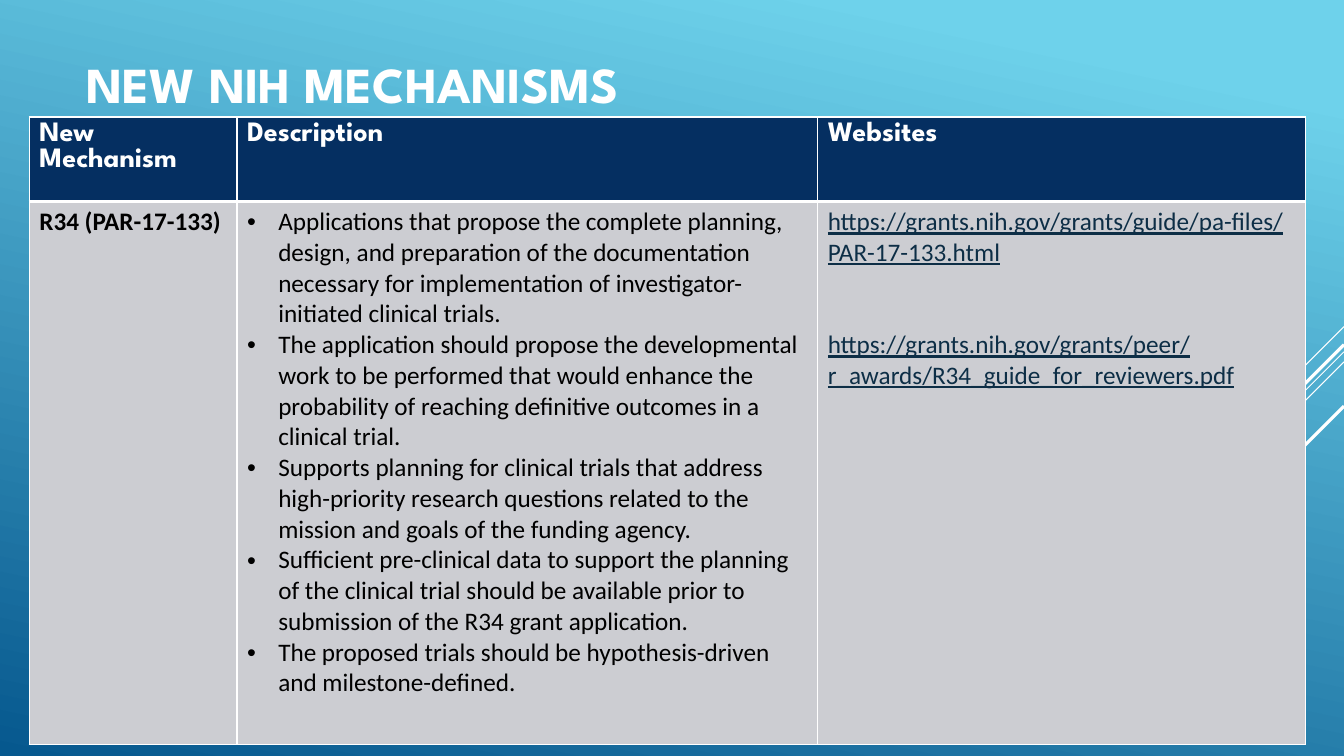
from lxml.etree import SubElement
from pptx import Presentation
from pptx.dml.color import RGBColor
from pptx.enum.shapes import MSO_CONNECTOR
from pptx.enum.text import MSO_ANCHOR
from pptx.oxml import parse_xml
from pptx.oxml.ns import nsdecls, qn
from pptx.util import Inches, Pt

WHITE, NAVY, GREY, BLACK, LINK = "FFFFFF", "052F61", "CCCDD2", "000000", "0D2E46"
SLIDE_WIDTH, SLIDE_HEIGHT = 13.33, 7.5
HEADING = {"name": "League Spartan", "bold": True}
BODY = {"name": "Calibri", "size": Pt(18), "bold": False}


def color(value):
    return RGBColor.from_string(value)


class SlideBuilder:
    def __init__(self, slide):
        self.slide = slide

    def background(self, stops, angle):
        fill = self.slide.background.fill
        fill.gradient()
        fill.gradient_angle = angle
        for stop, (position, value) in zip(fill.gradient_stops, stops):
            stop.position = position
            stop.color.rgb = color(value)

    def line(self, start, end, width):
        points = [Inches(n) for n in (*start, *end)]
        streak = self.slide.shapes.add_connector(MSO_CONNECTOR.STRAIGHT, *points)
        streak.line.color.rgb = color(WHITE)
        streak.line.width = Pt(width)
        SubElement(streak._element.spPr, qn("a:effectLst"))

    def paragraphs(self, frame, texts, style, ink, gap=0, bullets=False):
        for index, text in enumerate(texts):
            paragraph = frame.add_paragraph() if index else frame.paragraphs[0]
            if index and gap:
                paragraph.space_before = Pt(gap)
            run = paragraph.add_run()
            run.text = text
            for key, value in style.items():
                setattr(run.font, key, value)
            run.font.color.rgb = color(ink)
            if bullets:
                props = paragraph._p.get_or_add_pPr()
                props.set("marL", str(Inches(0.31)))
                props.set("indent", str(-Inches(0.31)))
                SubElement(props, qn("a:buFont"), typeface="Arial")
                SubElement(props, qn("a:buChar"), char="•")

    def text(self, box, texts, style, ink):
        frame = self.slide.shapes.add_textbox(*map(Inches, box)).text_frame
        frame.word_wrap = True
        frame.vertical_anchor = MSO_ANCHOR.MIDDLE
        self.paragraphs(frame, texts, style, ink)

    def table(self, box, widths, heights):
        table = self.slide.shapes.add_table(
            len(heights), len(widths), *map(Inches, box)).table
        for column, width in zip(table.columns, widths):
            column.width = Inches(width)
        for row, height in zip(table.rows, heights):
            row.height = Inches(height)
        return table

    def cell(self, cell, fill, borders, texts, style, ink, **layout):
        cell.fill.solid()
        cell.fill.fore_color.rgb = color(fill)
        props = cell._tc.get_or_add_tcPr()
        for index, (side, width) in enumerate(borders.items()):
            props.insert(index, parse_xml(
                f'<a:ln{side} {nsdecls("a")} w="{Pt(width)}"><a:solidFill>'
                f'<a:srgbClr val="{WHITE}"/></a:solidFill></a:ln{side}>'))
        self.paragraphs(cell.text_frame, texts, style, ink, **layout)


def main():
    prs = Presentation()
    prs.slide_width, prs.slide_height = Inches(SLIDE_WIDTH), Inches(SLIDE_HEIGHT)
    builder = SlideBuilder(prs.slides.add_slide(prs.slide_layouts[6]))

    # Background and diagonal streaks from the right edge
    builder.background([(0.1, "6ED2EB"), (1, "06588E")], 258)
    for top, run, width in [(3.24, 1, 0.75), (3.49, 3.26, 0.75), (3.59, 2.07, 0.75),
                            (3.42, 1.91, 2.25), (4.03, 1.39, 2.25)]:
        builder.line((SLIDE_WIDTH, top), (SLIDE_WIDTH - run, top + run), width)

    # Title
    builder.text((0.76, 0, 9.33, 1.65), ["NEW NIH MECHANISMS"],
                 {**HEADING, "size": Pt(36)}, WHITE)

    # Table header
    mechanisms = builder.table((0.29, 1.16, 12.66, 6.23), (2.06, 5.76, 4.84), (0.84, 5.39))
    header_borders = {"L": 1, "R": 1, "T": 1, "B": 3}
    for column, heading in enumerate(["New Mechanism", "Description", "Websites"]):
        builder.cell(mechanisms.cell(0, column), NAVY, header_borders, [heading],
                     {**HEADING, "size": Pt(20)}, WHITE)

    # Table body
    description = [
        "Applications that propose the complete planning, design, and preparation of the "
        "documentation necessary for implementation of investigator-initiated clinical trials.",
        "The application should propose the developmental work to be performed that would "
        "enhance the probability of reaching definitive outcomes in a clinical trial.",
        "Supports planning for clinical trials that address high-priority research questions "
        "related to the mission and goals of the funding agency.",
        "Sufficient pre-clinical data to support the planning of the clinical trial should be "
        "available prior to submission of the R34 grant application.",
        "The proposed trials should be hypothesis-driven and milestone-defined.",
    ]
    websites = [
        "https://grants.nih.gov/grants/guide/pa-files/PAR-17-133.html",
        "https://grants.nih.gov/grants/peer/r_awards/R34_guide_for_reviewers.pdf",
    ]
    body_cells = [
        (["R34 (PAR-17-133)"], {**BODY, "bold": True}, BLACK, {}),
        (description, BODY, BLACK, {"bullets": True}),
        (websites, {**BODY, "underline": True}, LINK, {"gap": 44}),
    ]
    body_borders = {"L": 1, "R": 1, "T": 3, "B": 1}
    for column, (texts, style, ink, layout) in enumerate(body_cells):
        builder.cell(mechanisms.cell(1, column), GREY, body_borders,
                     texts, style, ink, **layout)

    prs.save("out.pptx")


if __name__ == "__main__":
    main()
